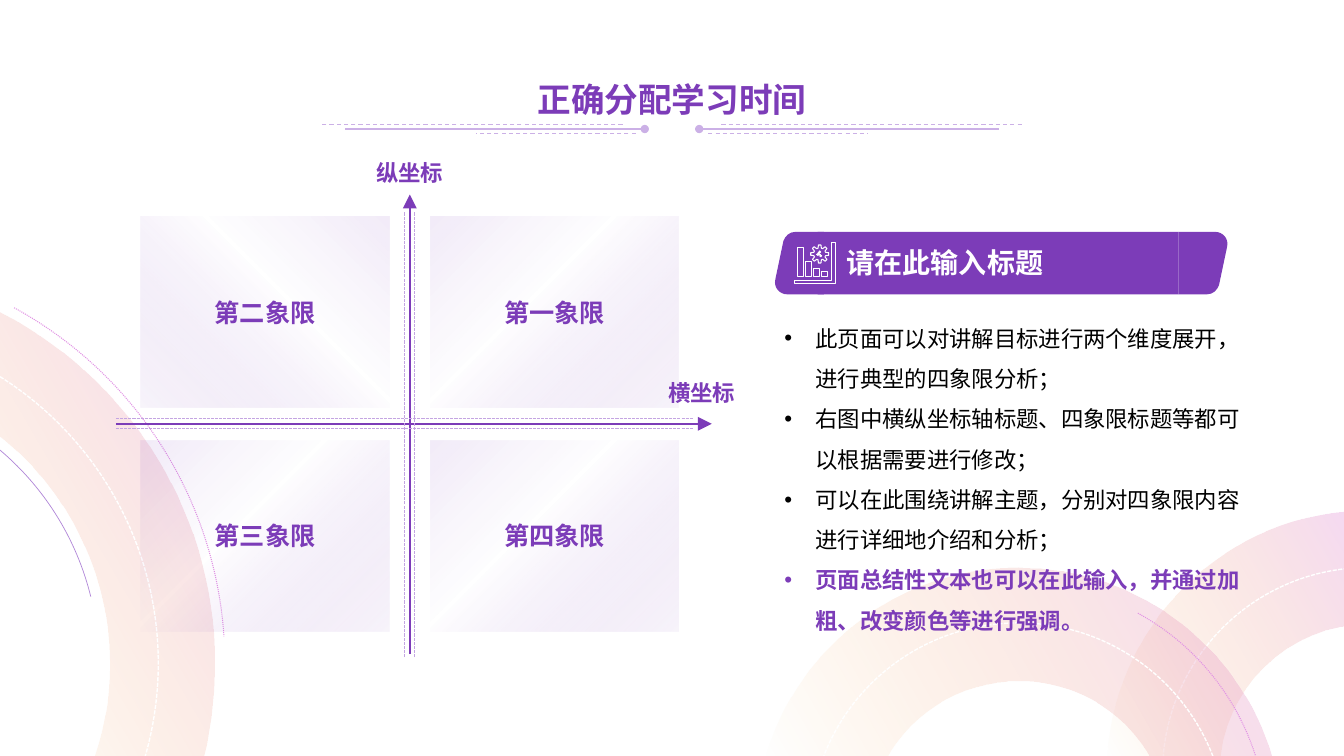
from collections import namedtuple
from math import cos, radians, sin, tan

from pptx import Presentation
from pptx.dml.color import RGBColor
from pptx.enum.dml import MSO_LINE as Dash
from pptx.enum.shapes import MSO_CONNECTOR as Connector, MSO_SHAPE as Shape
from pptx.enum.text import MSO_ANCHOR as Anchor, MSO_AUTO_SIZE as AutoSize, PP_ALIGN as Align
from pptx.oxml import parse_xml
from pptx.oxml.ns import nsdecls
from pptx.util import Inches, Pt

PURPLE, LILAC = RGBColor(0x7C, 0x3C, 0xB8), RGBColor(0xC4, 0xA5, 0xE2)
VIOLET, LAVENDER = RGBColor(0xB1, 0x87, 0xD8), RGBColor(0xE5, 0xD7, 0xF2)
MAUVE, PINK = RGBColor(0xCB, 0xB0, 0xE6), RGBColor(0xE1, 0x92, 0xE5)
ORANGE = RGBColor(0xFC, 0x97, 0x13)
WHITE, BLACK = RGBColor(0xFF, 0xFF, 0xFF), RGBColor(0, 0, 0)
Box = namedtuple("Box", "left top width height")


def emu(*lengths):
    """Turn lengths in inches into EMU."""
    return [Inches(length) for length in lengths]


def element(tag, attributes="", inner=""):
    """Make a drawing element."""
    return parse_xml(f'<a:{tag} {nsdecls("a")} {attributes}>{inner}</a:{tag}>')


def write(frame, text, size=16, color=PURPLE, bold=True, align=Align.CENTER, anchor=Anchor.TOP):
    """Write one paragraph per line of text, all in one format."""
    frame.word_wrap, frame.auto_size, frame.vertical_anchor = True, AutoSize.NONE, anchor
    frame.text = text
    for paragraph in frame.paragraphs:
        paragraph.alignment = align
        font = paragraph.runs[0].font
        font.name, font.size, font.bold = "Arial", Pt(size), bold
        font.color.rgb = color
    return frame


def add_text(slide, box, text, **style):
    """Add a text box with formatted text."""
    return write(slide.shapes.add_textbox(*emu(*box)).text_frame, text, **style)


def paint(shape, fill=None, line=None, width=0.75, dash=None):
    """Set fill and outline of a shape and drop its shadow."""
    shape.shadow.inherit = False
    shape.fill.background()
    shape.line.fill.background()
    if fill is not None:
        shape.fill.solid()
        shape.fill.fore_color.rgb = fill
    if line is not None:
        shape.line.color.rgb = line
        shape.line.width, shape.line.dash_style = Pt(width), dash


def paint_gradient(shape, stops, angle):
    """Fill a shape with a linear gradient of (position, color, opacity) stops in percent."""
    paint(shape)
    marks = "".join(f'<a:gs pos="{position * 1000}"><a:srgbClr val="{color}">'
                    f'<a:alpha val="{opacity * 1000}"/></a:srgbClr></a:gs>'
                    for position, color, opacity in stops)
    properties = shape.element.spPr
    properties.replace(properties.find("{*}noFill"), element(
        "gradFill", inner=f'<a:gsLst>{marks}</a:gsLst><a:lin ang="{angle * 60000}" scaled="0"/>'))


def add_line(slide, start, end, color, width=0.75, dash=None, head=None, tail=None):
    """Add a straight line with optional line ends."""
    connector = slide.shapes.add_connector(Connector.STRAIGHT, *emu(*start, *end))
    connector.line.color.rgb = color
    connector.line.width, connector.line.dash_style = Pt(width), dash
    outline = connector.line._get_or_add_ln()
    if head:
        outline.append(element("headEnd", f'type="{head}"'))
    if tail:
        outline.append(element("tailEnd", f'type="{tail}" w="lg" len="lg"'))
    connector.element.spPr.append(element("effectLst"))


def add_outline(slide, *contours):
    """Add closed contours whose steps hold one point for a line or three for a curve."""
    builder = slide.shapes.build_freeform(*emu(*contours[0][0][-1]), scale=1.0)
    for index, contour in enumerate(contours):
        if index:
            builder.move_to(*emu(*contour[0][-1]))
        builder.add_line_segments([emu(*step[-1]) for step in contour[1:]], close=True)
    shape = builder.convert_to_shape()
    lines = list(shape.element.iter("{*}lnTo"))
    steps = [step for contour in contours for step in contour[1:] + contour[:1]]
    for line, step in zip(lines, steps):
        if len(step) == 3:
            points = "".join(f'<a:pt x="{Inches(x) - shape.left}" y="{Inches(y) - shape.top}"/>'
                             for x, y in step)
            line.getparent().replace(line, element("cubicBezTo", inner=points))
    return shape


def arc_steps(center, radius, *angles):
    """List a point and then the curves that follow a circle through the angles."""
    def spot(angle, along=0):
        c, s = cos(radians(angle)), sin(radians(angle))
        return center[0] + radius * (c - along * s), center[1] + radius * (s + along * c)

    steps = [[spot(angles[0])]]
    for start, end in zip(angles, angles[1:]):
        pull = 4 / 3 * tan(radians(end - start) / 4)
        steps.append([spot(start, pull), spot(end, -pull), spot(end)])
    return steps


def add_background(slide):
    """Draw fading rings with dashed middle lines, and thin arcs, in the lower corners."""
    right, middle, left = (13.57, 7.67), (10.1, 8.25), (-1.79, 6.58)
    rings = [
        (right, (2.6, 180.9, 270), (1.48, 181.5, 270), (2.04, 181.1, 270), [[(13.57, 7.63)]]),
        (middle, (2.62, 193.7, 270, 346.3), (1.5, 204.4, 270, 335.6), (2.07, 197.4, 270, 342.6), []),
        (left, (3.92, -66.7, 0, 15.5), (2.88, -57.4, 0, 21.4), (3.36, -62.5, 0, 18.2), [[(-0.24, 7.63)]])]
    for center, outer, inner, dashed, corner in rings:
        edge = arc_steps(center, *outer) + arc_steps(center, inner[0], *inner[:0:-1])
        paint_gradient(add_outline(slide, edge), [(0, PINK, 37), (100, ORANGE, 0)], 150)
        paint(add_outline(slide, arc_steps(center, *dashed) + corner),
              line=WHITE, width=1, dash=Dash.SQUARE_DOT)
    for (x, y), radius, start, end, color, width, dash in (
            (left, 2.77, 296.7, 346.2, VIOLET, 0.5, None),
            (left, 4.02, 298.7, 356.2, PINK, 0.75, Dash.ROUND_DOT),
            (middle, 2.47, 298.7, 356.2, PINK, 0.75, Dash.ROUND_DOT)):
        arc = slide.shapes.add_shape(
            Shape.ARC, *emu(x - radius, y - radius, 2 * radius, 2 * radius))
        arc.adjustments[0], arc.adjustments[1] = start * 0.6, end * 0.6
        paint(arc, line=color, width=width, dash=dash)


def add_title(slide, box, text):
    """Place the title and the mirrored lines below it."""
    title = slide.shapes.title
    title.left, title.top, title.width, title.height = emu(*box)
    write(title.text_frame, text, size=24)
    center, y = box.left + box.width / 2, box.top + 0.55
    for side in (-1, 1):
        for near, far, shift, width, dash, head in (
                (0.27, 3.24, 0, 1.25, None, "oval"), (0.36, 1.94, 0.04, 0.75, Dash.DASH, None),
                (0.49, 3.47, -0.04, 0.75, Dash.DASH, None)):
            add_line(slide, (center + side * near, y + shift), (center + side * far, y + shift),
                     MAUVE, width, dash, head)


def add_quadrants(slide, box, rows):
    """Lay out the two by two tiles and the labelled axes between them."""
    width, height = 2.46, 1.89
    for row, names in enumerate(rows):
        for column, name in enumerate(names):
            tile = slide.shapes.add_shape(Shape.RECTANGLE, *emu(
                box.left + column * (box.width - width), box.top + row * (box.height - height), width, height))
            paint_gradient(tile, [(0, PURPLE, 10), (42, PURPLE, 0), (100, LAVENDER, 26)],
                           135 if (row, column) == (0, 0) else 45)
            write(tile.text_frame, name, size=18, anchor=Anchor.MIDDLE)
    x, y = box.left + box.width / 2, box.top + box.height / 2
    left, right, top, bottom = box.left - 0.25, box.left + 5.66, box.top - 0.22, box.top + 4.34
    add_line(slide, (left, y), (right, y), PURPLE, 1.5, tail="triangle")
    add_line(slide, (x, bottom), (x, top), PURPLE, 1.5, tail="triangle")
    for shift in (-0.05, 0.05):
        add_line(slide, (left, y + shift), (right - 0.19, y + shift), LILAC, dash=Dash.SQUARE_DOT)
        add_line(slide, (x + shift, bottom + 0.03), (x + shift, top + 0.17), LILAC, dash=Dash.SQUARE_DOT)
    add_text(slide, Box(x - 0.53, top - 0.4, 1.06, 0.37), "纵坐标")
    add_text(slide, Box(right - 0.63, y - 0.49, 1.06, 0.37), "横坐标")


def add_icon(slide, box):
    """Draw a small bar chart with a gear."""
    left, top, right, bottom = box.left, box.top, box.left + box.width, box.top + box.height
    corner = [(right, bottom), (left, bottom), (left, bottom - 0.03),
              (right - 0.04, bottom - 0.03), (right - 0.04, top), (right, top)]
    paint(add_outline(slide, [[point] for point in corner]), line=WHITE)
    for index, height in enumerate((0.28, 0.15, 0.08, 0.05)):
        bar = slide.shapes.add_shape(Shape.RECTANGLE, *emu(
            left + 0.03 + index * 0.08, bottom - 0.07 - height, 0.06, height))
        paint(bar, line=WHITE)
    center = (left + 0.25, top + 0.11)
    teeth = [arc_steps(center, radius, tooth * 45 + turn)[0] for tooth in range(8)
             for turn, radius in ((-16, 0.06), (-8, 0.09), (8, 0.09), (16, 0.06))]
    holes = [arc_steps(arc_steps(center, 0.02, angle)[0][0], 0.01, 0, 90, 180, 270)
             for angle in (60, 165, 270)]
    paint(add_outline(slide, teeth, *holes), line=WHITE)


def add_banner(slide, box, text):
    """Draw the slanted banner, a bar between two rounded caps, with icon and heading."""
    left, top, width, height = box
    bar = slide.shapes.add_shape(Shape.RECTANGLE, *emu(left + 0.43, top, width - 0.91, height))
    paint(bar, fill=PURPLE)
    cap = [[(0, 0)], [(0.36, 0)], [(0.44, 0), (0.5, 0.07), (0.48, 0.15)], [(0.4, 0.53)],
           [(0.38, 0.58), (0.34, height), (0.28, height)], [(0, height)]]
    for x, y, side in ((left + width - 0.48, top, 1), (left + 0.49, top + height, -1)):
        turned = [[(x + side * a, y + side * b) for a, b in step] for step in cap]
        paint(add_outline(slide, turned), fill=PURPLE)
    add_text(slide, Box(left + 0.62, top + 0.09, 2.61, 0.44), text,
             size=20, color=WHITE, align=Align.LEFT)
    add_icon(slide, Box(left + 0.2, top + 0.11, 0.41, 0.4))


def add_bullets(slide, box, lines):
    """Write the bulleted list with its last item emphasised."""
    frame = add_text(slide, box, "\n".join(lines), color=BLACK, bold=False, align=Align.LEFT)
    for paragraph in frame.paragraphs:
        paragraph.line_spacing = 1.5
        properties = paragraph._p.get_or_add_pPr()
        properties.set("marL", str(Inches(0.31)))
        properties.set("indent", str(-Inches(0.31)))
        properties.extend([element("buFont", 'typeface="Arial"'), element("buChar", 'char="•"')])
    font = frame.paragraphs[-1].runs[0].font
    font.bold, font.color.rgb = True, PURPLE


presentation = Presentation()
presentation.slide_width, presentation.slide_height = emu(13.33, 7.5)
slide = presentation.slides.add_slide(presentation.slide_layouts[5])
add_background(slide)
add_title(slide, Box(3.13, 0.73, 7.07, 0.5), "正确分配学习时间")
add_quadrants(slide, Box(1.4, 2.15, 5.33, 4.11), [("第二象限", "第一象限"), ("第三象限", "第四象限")])
add_bullets(slide, Box(7.68, 3.04, 4.89, 3.28), [
    "此页面可以对讲解目标进行两个维度展开，进行典型的四象限分析；",
    "右图中横纵坐标轴标题、四象限标题等都可以根据需要进行修改；",
    "可以在此围绕讲解主题，分别对四象限内容进行详细地介绍和分析；",
    "页面总结性文本也可以在此输入，并通过加粗、改变颜色等进行强调。"])
add_banner(slide, Box(7.68, 2.3, 4.49, 0.62), "请在此输入标题")
presentation.save("out.pptx")
